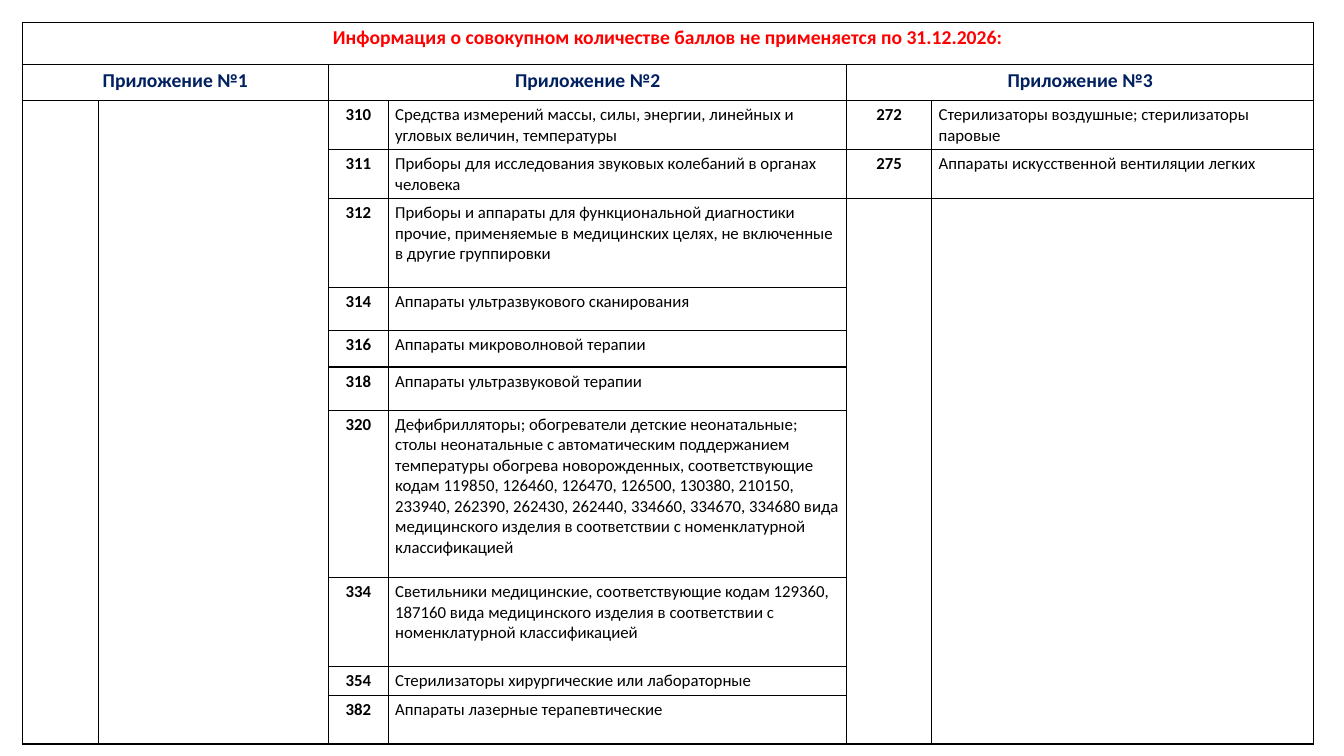
import pptx
import pptx.util
import pptx.dml.color
import pptx.enum.text
import pptx.oxml
import pptx.oxml.ns
import lxml.etree

Inches = pptx.util.Inches
Pt = pptx.util.Pt
RGB = pptx.dml.color.RGBColor.from_string
ALIGN = pptx.enum.text.PP_ALIGN

HEADLINE = "Информация о совокупном количестве баллов не применяется по 31.12.2026:"
APPENDICES = ["Приложение №1", "Приложение №2", "Приложение №3"]
APPENDIX_2 = [
    ("310", "Средства измерений массы, силы, энергии, линейных и угловых величин, температуры"),
    ("311", "Приборы для исследования звуковых колебаний в органах человека"),
    ("312", "Приборы и аппараты для функциональной диагностики прочие, применяемые в медицинских целях, "
            "не включенные в другие группировки"),
    ("314", "Аппараты ультразвукового сканирования"),
    ("316", "Аппараты микроволновой терапии"),
    ("318", "Аппараты ультразвуковой терапии"),
    ("320", "Дефибрилляторы; обогреватели детские неонатальные; столы неонатальные с автоматическим "
            "поддержанием температуры обогрева новорожденных, соответствующие кодам 119850, 126460, "
            "126470, 126500, 130380, 210150, 233940, 262390, 262430, 262440, 334660, 334670, 334680 "
            "вида медицинского изделия в соответствии с номенклатурной классификацией"),
    ("334", "Светильники медицинские, соответствующие кодам 129360, 187160 вида медицинского изделия "
            "в соответствии с номенклатурной классификацией"),
    ("354", "Стерилизаторы хирургические или лабораторные"),
    ("382", "Аппараты лазерные терапевтические"),
]
APPENDIX_3 = [
    ("272", "Стерилизаторы воздушные; стерилизаторы паровые"),
    ("275", "Аппараты искусственной вентиляции легких"),
]

COLUMN_WIDTHS = [0.76, 2.28, 0.59, 4.55, 0.84, 3.79]
ROW_HEIGHTS = [0.42, 0.36, 0.48, 0.48, 0.88, 0.43, 0.36, 0.43, 1.66, 0.88, 0.29, 0.48]
LEFT, TOP = 0.22, 0.22
FIRST_ITEM_ROW = 2

THEME = {
    "font": "Calibri",
    "border": "000000",
    "border_width": Pt(1),
    "margins": {"margin_left": Inches(0.07), "margin_right": Inches(0.07),
                "margin_top": Inches(0.04), "margin_bottom": Inches(0.04)},
    "headline": {"size": Pt(14), "bold": True, "color": "FF0000", "align": ALIGN.CENTER},
    "appendix": {"size": Pt(14), "bold": True, "color": "002060", "align": ALIGN.CENTER},
    "code": {"size": Pt(12), "bold": True, "color": "000000", "align": ALIGN.CENTER},
    "product": {"size": Pt(12), "bold": False, "color": "000000", "align": ALIGN.LEFT},
}


def write(cell, text, role):
    style = THEME[role]
    paragraph = cell.text_frame.paragraphs[0]
    paragraph.alignment = style["align"]
    run = paragraph.add_run()
    run.text = text
    for name, value in {"name": THEME["font"], "size": style["size"], "bold": style["bold"]}.items():
        setattr(run.font, name, value)
    run.font.color.rgb = RGB(style["color"])


def draw_borders(cell):
    properties = cell._tc.get_or_add_tcPr()
    qn = pptx.oxml.ns.qn
    for position, side in enumerate(("a:lnL", "a:lnR", "a:lnT", "a:lnB")):
        line = lxml.etree.Element(qn(side), w=str(THEME["border_width"]))
        fill = lxml.etree.SubElement(line, qn("a:solidFill"))
        lxml.etree.SubElement(fill, qn("a:srgbClr"), val=THEME["border"])
        properties.insert(position, line)


def prepare(cell):
    for name, value in THEME["margins"].items():
        setattr(cell, name, value)
    cell.fill.background()
    draw_borders(cell)
    ending = cell.text_frame.paragraphs[0]._p.get_or_add_endParaRPr()
    ending.set("sz", str(int(THEME["product"]["size"].pt * 100)))


def main():
    deck = pptx.Presentation()
    deck.slide_width, deck.slide_height = Inches(13.33), Inches(7.5)
    slide = deck.slides.add_slide(deck.slide_layouts[6])
    table = slide.shapes.add_table(
        len(ROW_HEIGHTS), len(COLUMN_WIDTHS), Inches(LEFT), Inches(TOP),
        Inches(sum(COLUMN_WIDTHS)), Inches(sum(ROW_HEIGHTS))).table
    table.first_row = table.horz_banding = False
    for column, width in zip(table.columns, COLUMN_WIDTHS):
        column.width = Inches(width)
    for row, height in zip(table.rows, ROW_HEIGHTS):
        row.height = Inches(height)
    for cell in table.iter_cells():
        prepare(cell)

    last_row, last_column = len(ROW_HEIGHTS) - 1, len(COLUMN_WIDTHS) - 1
    table.cell(0, 0).merge(table.cell(0, last_column))
    write(table.cell(0, 0), HEADLINE, "headline")

    for index, (appendix, items) in enumerate(zip(APPENDICES, ([], APPENDIX_2, APPENDIX_3))):
        code_column = 2 * index
        table.cell(1, code_column).merge(table.cell(1, code_column + 1))
        write(table.cell(1, code_column), appendix, "appendix")
        for row, (code, product) in enumerate(items, FIRST_ITEM_ROW):
            write(table.cell(row, code_column), code, "code")
            write(table.cell(row, code_column + 1), product, "product")
        empty_row = FIRST_ITEM_ROW + len(items)
        if empty_row < last_row:
            for column in (code_column, code_column + 1):
                table.cell(empty_row, column).merge(table.cell(last_row, column))

    deck.save("out.pptx")


if __name__ == "__main__":
    main()
